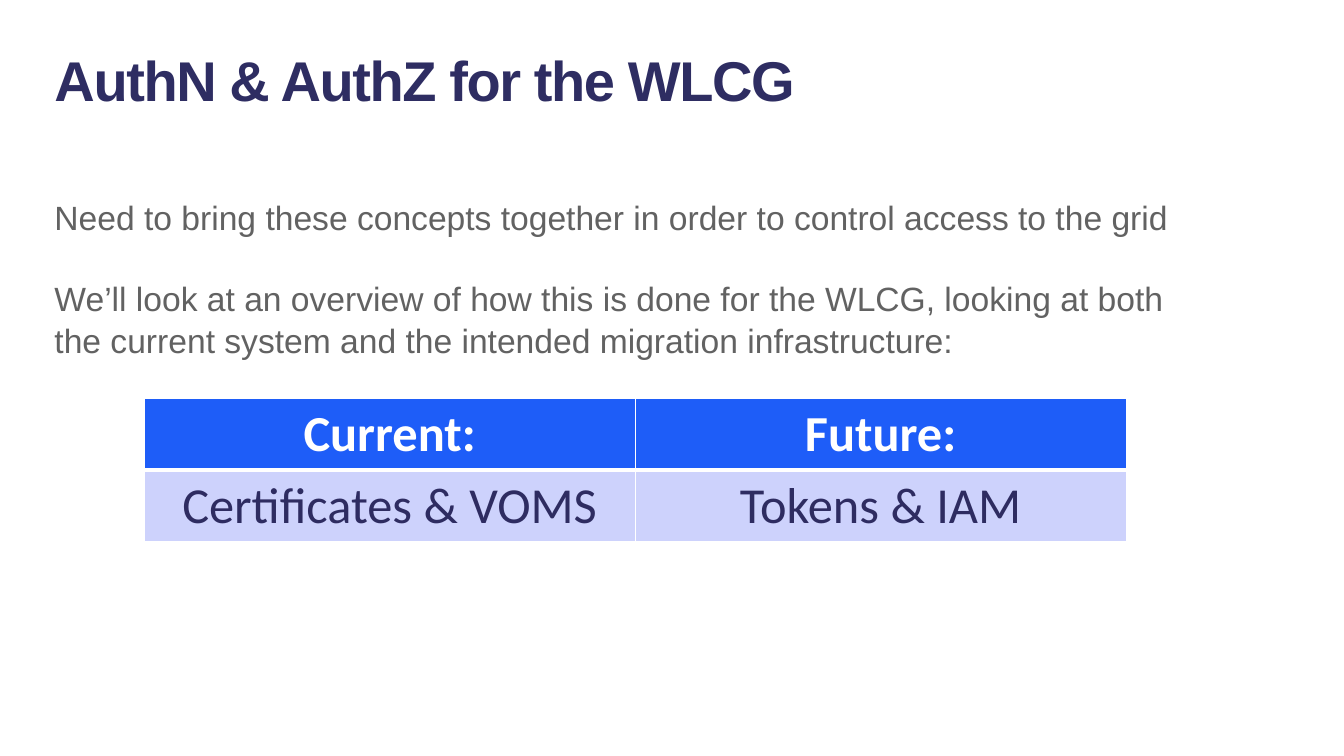
from pptx import Presentation
from pptx import util as u
from pptx.dml.color import RGBColor
from pptx.enum import text
from pptx.oxml import parse_xml
from pptx.oxml.ns import nsdecls

NAVY, GREY, WHITE = "2E2D62", "626262", "FFFFFF"
TABLE_ROWS = [
    (["Current:", "Future:"], "1E5DF8", WHITE, True, 3),
    (["Certificates & VOMS", "Tokens & IAM"], "CDD2FC", "2E2C61", False, 1),
]


def colour(value):
    return RGBColor.from_string(value)


def add_run(paragraph, words, size, font, ink, bold=False):
    run = paragraph.add_run()
    run.text = words
    run.font.size = u.Pt(size)
    run.font.name = font
    run.font.color.rgb = colour(ink)
    run.font.bold = bold
    return run


def place(holder, left, top, width, height, anchor):
    holder.left, holder.top = u.Inches(left), u.Inches(top)
    holder.width, holder.height = u.Inches(width), u.Inches(height)
    frame = holder.text_frame
    frame.word_wrap = True
    frame.auto_size = text.MSO_AUTO_SIZE.NONE
    frame.vertical_anchor = anchor
    return frame


def fill_title(holder, words):
    frame = place(holder, 0.44, 0.38, 12.79, 0.77, text.MSO_ANCHOR.MIDDLE)
    heading = frame.paragraphs[0]
    heading.alignment = text.PP_ALIGN.LEFT
    heading.line_spacing = 1.05
    heading.space_after = u.Pt(2)
    run = add_run(heading, words, 40, "Arial", NAVY, True)
    run.font._element.set("spc", "-100")


def fill_body(holder, statements):
    frame = place(holder, 0.44, 1.88, 11.72, 2.93, text.MSO_ANCHOR.TOP)
    for index, words in enumerate(statements):
        statement = frame.add_paragraph() if index else frame.paragraphs[0]
        properties = statement._p.get_or_add_pPr()
        properties.set("marL", "0")
        properties.set("indent", "0")
        properties.append(parse_xml(f"<a:buNone {nsdecls('a')}/>"))
        statement.line_spacing = 1.05
        statement.space_before = u.Pt(28 if index else 0)
        add_run(statement, words, 24, "Arial", GREY)


def set_borders(cell, bottom):
    properties = cell._tc.get_or_add_tcPr()
    for index, (side, points) in enumerate(
        [("L", 1), ("R", 1), ("T", 1), ("B", bottom)]
    ):
        border = parse_xml(
            f'<a:ln{side} {nsdecls("a")} w="{u.Pt(points)}"><a:solidFill>'
            f'<a:srgbClr val="{WHITE}"/></a:solidFill></a:ln{side}>'
        )
        properties.insert(index, border)


def add_comparison(slide):
    table = slide.shapes.add_table(
        2, 2, u.Inches(1.43), u.Inches(3.95), u.Inches(9.74), u.Inches(1.4)
    ).table
    for row, (entries, fill, ink, bold, bottom) in enumerate(TABLE_ROWS):
        for column, words in enumerate(entries):
            cell = table.cell(row, column)
            cell.fill.solid()
            cell.fill.fore_color.rgb = colour(fill)
            set_borders(cell, bottom)
            entry = cell.text_frame.paragraphs[0]
            entry.alignment = text.PP_ALIGN.CENTER
            add_run(entry, words, 36, "Calibri", ink, bold)


def main():
    deck = Presentation()
    deck.slide_width, deck.slide_height = u.Inches(13.33), u.Inches(7.5)
    slide = deck.slides.add_slide(deck.slide_layouts[1])
    fill_title(slide.shapes.title, "AuthN & AuthZ for the WLCG")
    fill_body(slide.placeholders[1], [
        "Need to bring these concepts together in order to control access to the grid",
        "We’ll look at an overview of how this is done for the WLCG, looking at both "
        "the current system and the intended migration infrastructure:",
    ])
    add_comparison(slide)
    deck.save("out.pptx")


if __name__ == "__main__":
    main()
